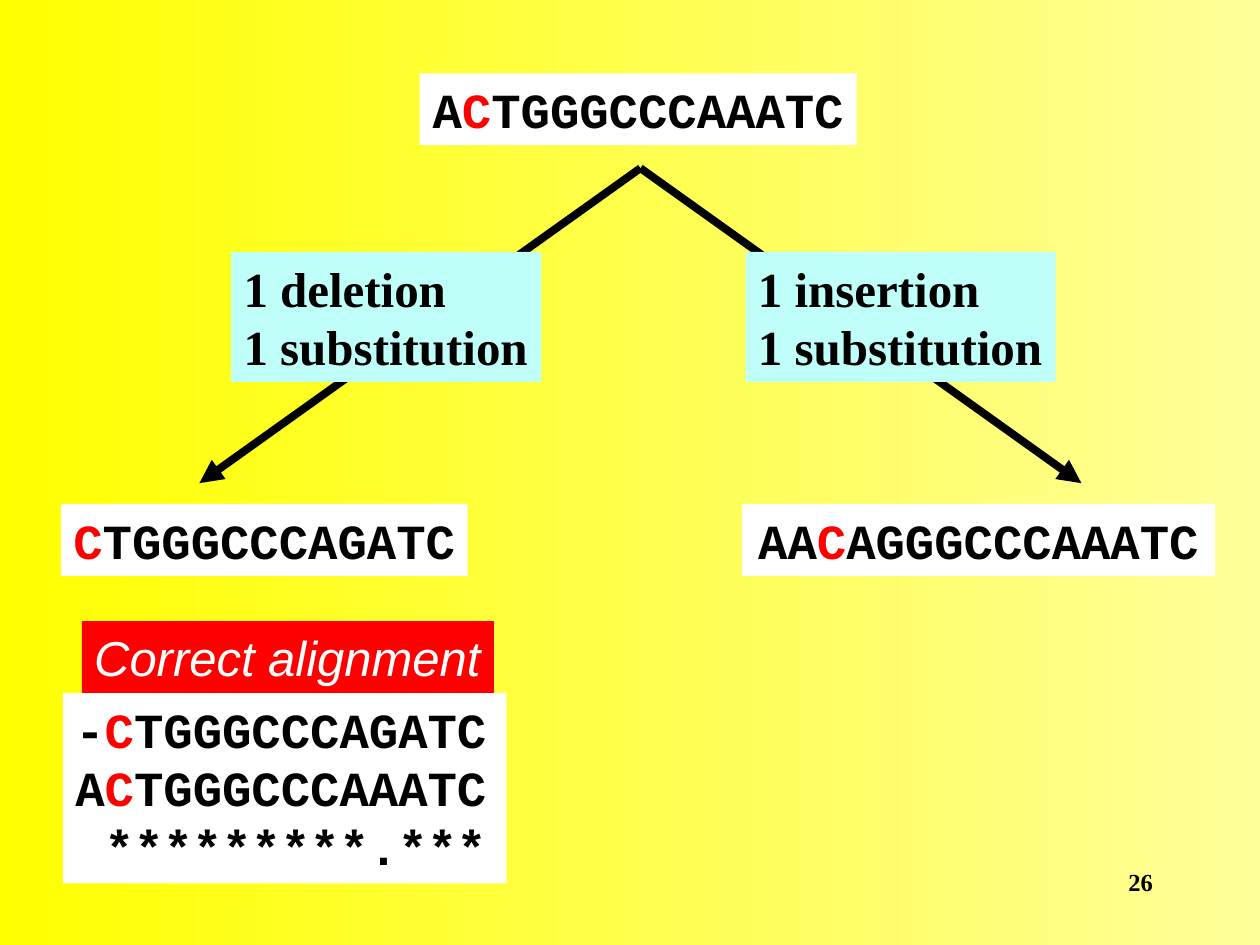
"""Build a slide showing two sequences derived from a common ancestor."""
from dataclasses import dataclass

from lxml import etree
from pptx import Presentation
from pptx.dml.color import RGBColor
from pptx.enum.shapes import MSO_CONNECTOR
from pptx.enum.text import MSO_AUTO_SIZE, PP_ALIGN
from pptx.oxml.ns import qn
from pptx.util import Cm, Pt

STRAIGHT = MSO_CONNECTOR.STRAIGHT
GROW = MSO_AUTO_SIZE.SHAPE_TO_FIT_TEXT
LEFT, CENTER, RIGHT = PP_ALIGN.LEFT, PP_ALIGN.CENTER, PP_ALIGN.RIGHT

COLOURS = {
    "black": "000000",
    "white": "FFFFFF",
    "red": "FF0000",
    "aqua": "C0FEF9",
    "yellow": "FFFF00",
    "pale": "FFFF99",
}
FORMATS = {
    "sequence": {"name": "Courier New", "size": Pt(28), "bold": True},
    "event": {"name": "Times New Roman", "size": Pt(28), "bold": True},
    "heading": {"name": "Arial", "size": Pt(28), "italic": True},
    "number": {"name": "Times New Roman", "size": Pt(14), "bold": True},
}
MARK = "|"


@dataclass
class Label:
    """A text box; text between marks is red, and sizes are in centimetres."""

    lines: list[str]
    left: float
    top: float
    width: float
    height: float
    style: str = "sequence"
    fill: str | None = "white"
    ink: str = "black"
    align: PP_ALIGN = LEFT


@dataclass
class Arrow:
    """An arrow from one point to another, in centimetres."""

    start: tuple[float, float]
    end: tuple[float, float]


ROOT = (12.91, 3.39)
ARROWS = [Arrow(ROOT, (ROOT[0] + reach, 9.74)) for reach in (-8.89, 8.89)]
EVENTS = [
    Label([f"1 {event}", "1 substitution"], left, 5.08, 6.25, 2.62, "event", "aqua")
    for event, left in (("deletion", 4.66), ("insertion", 15.03))
]
LABELS = [
    Label(["26"], 18.2, 17.35, 5.29, 1.27, "number", None, align=RIGHT),
    Label(["A|C|TGGGCCCAAATC"], 8.46, 1.48, 8.81, 1.45, align=CENTER),
    *EVENTS,
    Label(["AA|C|AGGGCCCAAATC"], 14.96, 10.16, 9.53, 1.45, align=CENTER),
    Label(["|C|TGGGCCCAGATC"], 1.23, 10.16, 8.2, 1.45),
    Label(["-|C|TGGGCCCAGATC", "A|C|TGGGCCCAAATC", " *********.***"],
          1.27, 13.97, 8.94, 3.84),
    Label(["Correct alignment"], 1.65, 12.52, 8.31, 1.45, "heading", "red", "white"),
]


def colour(name: str) -> RGBColor:
    """Return the named colour."""
    return RGBColor.from_string(COLOURS[name])


def draw_background(page) -> None:
    """Fill the page with a gradient running left to right."""
    fill = page.background.fill
    fill.gradient()
    fill.gradient_angle = 0
    for stop, name in zip(fill.gradient_stops, ("yellow", "pale")):
        stop.color.rgb = colour(name)


def draw_arrow(page, arrow: Arrow) -> None:
    """Draw a thick black arrow."""
    points = [Cm(value) for value in (*arrow.start, *arrow.end)]
    connector = page.shapes.add_connector(STRAIGHT, *points)
    connector.line.width = Pt(4.5)
    connector.line.color.rgb = colour("black")
    head = etree.SubElement(connector.line._get_or_add_ln(), qn("a:tailEnd"))
    head.set("type", "triangle")
    etree.SubElement(connector._element.spPr, qn("a:effectLst"))


def draw_label(page, label: Label) -> None:
    """Draw a text box with its marked letters in red."""
    place = [Cm(value) for value in (label.left, label.top, label.width, label.height)]
    box = page.shapes.add_textbox(*place)
    frame = box.text_frame
    frame.word_wrap = label.fill is None
    if label.fill:
        box.fill.solid()
        box.fill.fore_color.rgb = colour(label.fill)
        frame.auto_size = GROW
    for index, line in enumerate(label.lines):
        para = frame.add_paragraph() if index else frame.paragraphs[0]
        para.alignment = label.align
        for part, text in enumerate(line.split(MARK)):
            if text:
                span = para.add_run()
                span.text = text
                span.font.color.rgb = colour("red" if part % 2 else label.ink)
                for attribute, value in FORMATS[label.style].items():
                    setattr(span.font, attribute, value)


def main() -> None:
    """Build and save the deck."""
    deck = Presentation()
    deck.slide_width, deck.slide_height = Cm(25.4), Cm(19.05)
    page = deck.slides.add_slide(deck.slide_layouts[6])
    draw_background(page)
    for arrow in ARROWS:
        draw_arrow(page, arrow)
    for label in LABELS:
        draw_label(page, label)
    deck.save("out.pptx")


if __name__ == "__main__":
    main()
